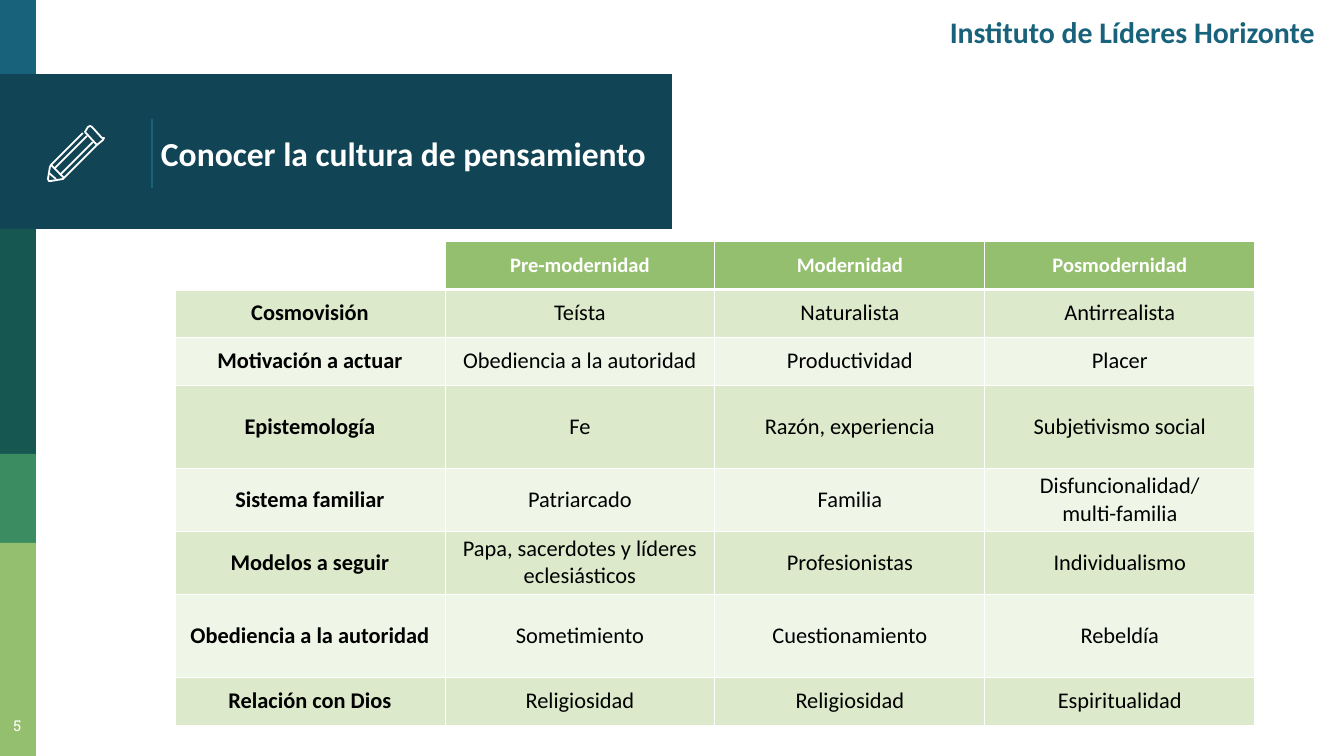
from pptx import Presentation
from pptx.dml.color import RGBColor
from pptx.enum.shapes import MSO_CONNECTOR, MSO_SHAPE
from pptx.enum.text import MSO_ANCHOR, PP_ALIGN
from pptx.util import Pt
from lxml.etree import SubElement
from pptx.oxml.ns import qn

PX = 914400 / 134.4
HUES = {
    "blue": "18637B", "navy": "114454", "teal": "165751", "green": "3B8D61",
    "lime": "94BF6E", "mid": "DCEACB", "pale": "EFF5E7",
    "white": "FFFFFF", "black": "000000",
}


def px(*nums):
    return [round(n * PX) for n in nums]


def write(frame, text, size, hue, bold, align, font="Calibri"):
    """Fill a text frame with one paragraph, a run for each line."""
    para = frame.paragraphs[0]
    para.alignment = align
    for i, line in enumerate(text.split("\n")):
        if i:
            para.add_line_break()
        run = para.add_run()
        run.text = line
        run.font.name = font
        run.font.size = Pt(size)
        run.font.bold = bold
        run.font.color.rgb = RGBColor.from_string(HUES[hue])


deck = Presentation()
deck.slide_width, deck.slide_height = px(1344, 756)
slide = deck.slides.add_slide(deck.slide_layouts[6])
shapes = slide.shapes

# Side strip and title band
for top, wide, high, hue in [
    (0, 36, 78, "blue"), (74, 672, 155, "navy"), (229, 36, 225, "teal"),
    (454, 36, 89, "green"), (543, 36, 213, "lime"),
]:
    bar = shapes.add_shape(MSO_SHAPE.RECTANGLE, *px(0, top, wide, high))
    bar.shadow.inherit = False
    bar.fill.solid()
    bar.fill.fore_color.rgb = RGBColor.from_string(HUES[hue])
    bar.line.fill.background()

# Thin rule before the title
rule = shapes.add_connector(MSO_CONNECTOR.STRAIGHT, *px(152, 119, 152, 188))
rule.line.color.rgb = RGBColor.from_string(HUES["blue"])
rule.line.width = Pt(0.75)
SubElement(rule._element.spPr, qn("a:effectLst"))

# Title, page number and institute name
for box, text, size, hue, bold, align, font, anchor, inset in [
    ((148, 78, 567, 151), "Conocer la cultura de pensamiento", 18, "white", True,
     PP_ALIGN.LEFT, "Calibri", MSO_ANCHOR.MIDDLE, 13),
    ((-8, 708, 51, 47), "5", 8, "white", False,
     PP_ALIGN.CENTER, "Roboto Slab", MSO_ANCHOR.TOP, 13),
    ((831, 8, 497, 82), "Instituto de Líderes Horizonte", 16, "blue", True,
     PP_ALIGN.RIGHT, "Calibri", MSO_ANCHOR.TOP, 6),
]:
    frame = shapes.add_textbox(*px(*box)).text_frame
    frame.word_wrap = True
    frame.vertical_anchor = anchor
    frame.margin_left, frame.margin_right = px(13, 13)
    frame.margin_top, frame.margin_bottom = px(inset, inset)
    write(frame, text, size, hue, bold, align, font)

# Pencil icon: eraser, grain, body, grain, lead, tip
icon = shapes.add_group_shape()
for dots, closed in [
    ([(102, 138), (92, 127), (90, 126), (88, 127), (85, 132), (97, 145),
      (103, 140), (104, 138)], True),
    ([(93, 142), (60, 175)], False),
    ([(83, 133), (51, 165), (50, 167), (48, 179), (49, 181), (51, 181),
      (63, 179), (65, 177), (97, 145)], False),
    ([(55, 168), (87, 136)], False),
    ([(56, 179), (49, 173)], False),
    ([(51, 165), (64, 178)], False),
]:
    pen = icon.shapes.build_freeform(*dots[0], scale=PX)
    pen.add_line_segments(dots[1:], close=closed)
    part = pen.convert_to_shape()
    part.shadow.inherit = False
    part.fill.background()
    part.line.color.rgb = RGBColor.from_string(HUES["white"])
    part.line.width = Pt(0.96)

# Table of eras
rows = [
    ("", "Pre-modernidad", "Modernidad", "Posmodernidad"),
    ("Cosmovisión", "Teísta", "Naturalista", "Antirrealista"),
    ("Motivación a actuar", "Obediencia a la autoridad", "Productividad", "Placer"),
    ("Epistemología", "Fe", "Razón, experiencia", "Subjetivismo social"),
    ("Sistema familiar", "Patriarcado", "Familia", "Disfuncionalidad/\nmulti-familia"),
    ("Modelos a seguir", "Papa, sacerdotes y líderes eclesiásticos",
     "Profesionistas", "Individualismo"),
    ("Obediencia a la autoridad", "Sometimiento", "Cuestionamiento", "Rebeldía"),
    ("Relación con Dios", "Religiosidad", "Religiosidad", "Espiritualidad"),
]
highs = [48, 48, 48, 83, 63, 63, 83, 48]
grid = shapes.add_table(len(rows), 4, *px(175, 241, 1080, sum(highs))).table
for col in grid.columns:
    col.width = px(270)[0]
for r, row in enumerate(rows):
    grid.rows[r].height = px(highs[r])[0]
    for c, text in enumerate(row):
        cell = grid.cell(r, c)
        cell.vertical_anchor = MSO_ANCHOR.MIDDLE
        cell.margin_left, cell.margin_right = px(8, 8)
        cell.margin_top, cell.margin_bottom = px(4, 4)

        # White borders, thicker under the header
        props = cell._tc.get_or_add_tcPr()
        for side in "LRTB":
            thick = (r, side) in [(0, "B"), (1, "T")]
            edge = SubElement(props, qn("a:ln" + side), w=str(Pt(1.5 if thick else 0.5)))
            SubElement(SubElement(edge, qn("a:solidFill")), qn("a:srgbClr"),
                       val=HUES["white"])

        if not text:
            cell.fill.background()
            continue
        cell.fill.solid()
        hue = "lime" if r == 0 else "mid" if r % 2 else "pale"
        cell.fill.fore_color.rgb = RGBColor.from_string(HUES[hue])
        write(cell.text_frame, text, 12 if r else 11, "black" if r else "white",
              r == 0 or c == 0, PP_ALIGN.CENTER)

deck.save("out.pptx")
